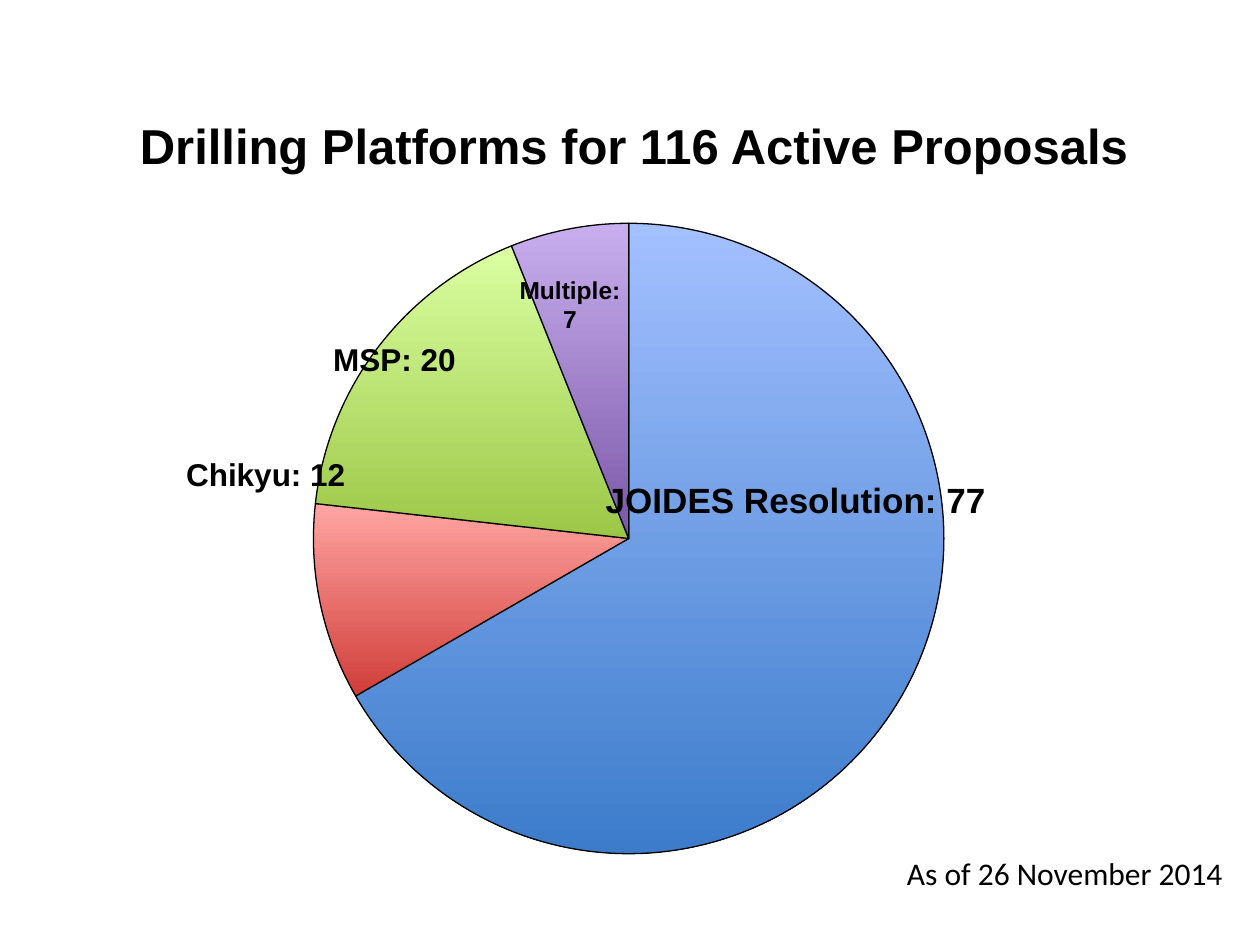
from lxml import etree
from pptx import Presentation
from pptx.chart.data import CategoryChartData
from pptx.dml.color import RGBColor
from pptx.enum.chart import XL_CHART_TYPE
from pptx.enum.text import MSO_ANCHOR, MSO_AUTO_SIZE, PP_ALIGN
from pptx.oxml import parse_xml
from pptx.oxml.ns import nsdecls, qn
from pptx.util import Pt

PIE = XL_CHART_TYPE.PIE
TOP = MSO_ANCHOR.TOP
NO_FIT = MSO_AUTO_SIZE.NONE
LEFT, CENTER = PP_ALIGN.LEFT, PP_ALIGN.CENTER
TITLE_ONLY = 5
BLACK = "000000"

# Share in percent, then the top and bottom colours of the slice
SLICES = [
    (66, "A3C0FF", "3C7CCB"),
    (10, "FFA5A2", "D03D39"),
    (17, "DAFFA2", "9CC746"),
    (6, "C8AEEE", "7B57A7"),
]
PLOT = {"x": 0.02, "y": 0.03, "w": 0.96, "h": 0.93}

# Text, box, size, whether the text casts a shadow
LABELS = [
    ("JOIDES Resolution: 77", (337.7, 270, 234, 31.5), 20, True),
    ("Chikyu: 12", (98.6, 256.3, 106.5, 29), 18, True),
    ("MSP: 20", (182.9, 190.8, 85, 29), 18, True),
    ("Multiple:\n7", (289.4, 153.4, 72.7, 41), 14, False),
]


def rgb(value):
    return RGBColor.from_string(value)


def place(sp, box):
    sp.left, sp.top, sp.width, sp.height = (Pt(v) for v in box)


def write(sp, text, size, font="Arial", bold=True, align=CENTER):
    tf = sp.text_frame
    tf.text = text
    tf.word_wrap = False
    tf.auto_size = NO_FIT
    tf.vertical_anchor = TOP
    for p in tf.paragraphs:
        p.alignment = align
        for r in p.runs:
            r.font.name = font
            r.font.size = Pt(size)
            r.font.bold = bold
            r.font.color.rgb = rgb(BLACK)


def add_text(s, text, box, size, **style):
    sp = s.shapes.add_textbox(*(Pt(v) for v in box))
    write(sp, text, size, **style)
    return sp


def add_text_shadow(sp):
    for fill in sp.text_frame._txBody.iter(qn("a:solidFill")):
        fill.addnext(parse_xml(
            f'<a:effectLst {nsdecls("a")}>'
            '<a:outerShdw blurRad="38100" dist="38100" dir="2700000" algn="tl">'
            '<a:srgbClr val="000000"><a:alpha val="43000"/></a:srgbClr>'
            '</a:outerShdw></a:effectLst>'))


def set_inner_plot(chart):
    """Fix the plot area as fractions of the chart, without its margins."""
    area = chart._chartSpace.chart.plotArea
    for old in area.findall(qn("c:layout")):
        area.remove(old)
    layout = etree.Element(qn("c:layout"))
    manual = etree.SubElement(layout, qn("c:manualLayout"))
    settings = {"layoutTarget": "inner", "xMode": "edge", "yMode": "edge", **PLOT}
    for name, value in settings.items():
        etree.SubElement(manual, qn(f"c:{name}"), val=str(value))
    area.insert(0, layout)


def add_pie(s, box):
    data = CategoryChartData()
    data.categories = [str(i + 1) for i in range(len(SLICES))]
    data.add_series("Series 1", [share for share, _, _ in SLICES])
    chart = s.shapes.add_chart(PIE, *(Pt(v) for v in box), data).chart
    chart.has_title = False
    chart.has_legend = False
    chart.font.name = "Calibri"
    chart.font.size = Pt(10)
    chart.font.color.rgb = rgb(BLACK)
    set_inner_plot(chart)

    plot = chart.plots[0]
    plot.vary_by_categories = True
    for i, (_, upper, lower) in enumerate(SLICES):
        fmt = plot.series[0].points[i].format
        fmt.fill.gradient()
        fmt.fill.gradient_angle = 270
        for stop, color in zip(fmt.fill.gradient_stops, (upper, lower)):
            stop.color.rgb = rgb(color)
        fmt.line.color.rgb = rgb(BLACK)
        fmt.line.width = Pt(0.75)


def add_labels(s):
    for text, box, size, shadow in LABELS:
        sp = add_text(s, text, box, size)
        if shadow:
            add_text_shadow(sp)


def main():
    prs = Presentation()
    prs.slide_width, prs.slide_height = Pt(720), Pt(540)
    s = prs.slides.add_slide(prs.slide_layouts[TITLE_ONLY])
    place(s.shapes.title, (70.6, 62.6, 583.2, 41))
    write(s.shapes.title, "Drilling Platforms for 116 Active Proposals", 28)
    add_pie(s, (65.5, 116, 587.5, 387.4))
    add_text(s, "As of 26 November 2014", (511.2, 484.6, 197.3, 29), 18,
             font="Calibri", bold=False, align=LEFT)
    add_labels(s)
    prs.save("out.pptx")


if __name__ == "__main__":
    main()
